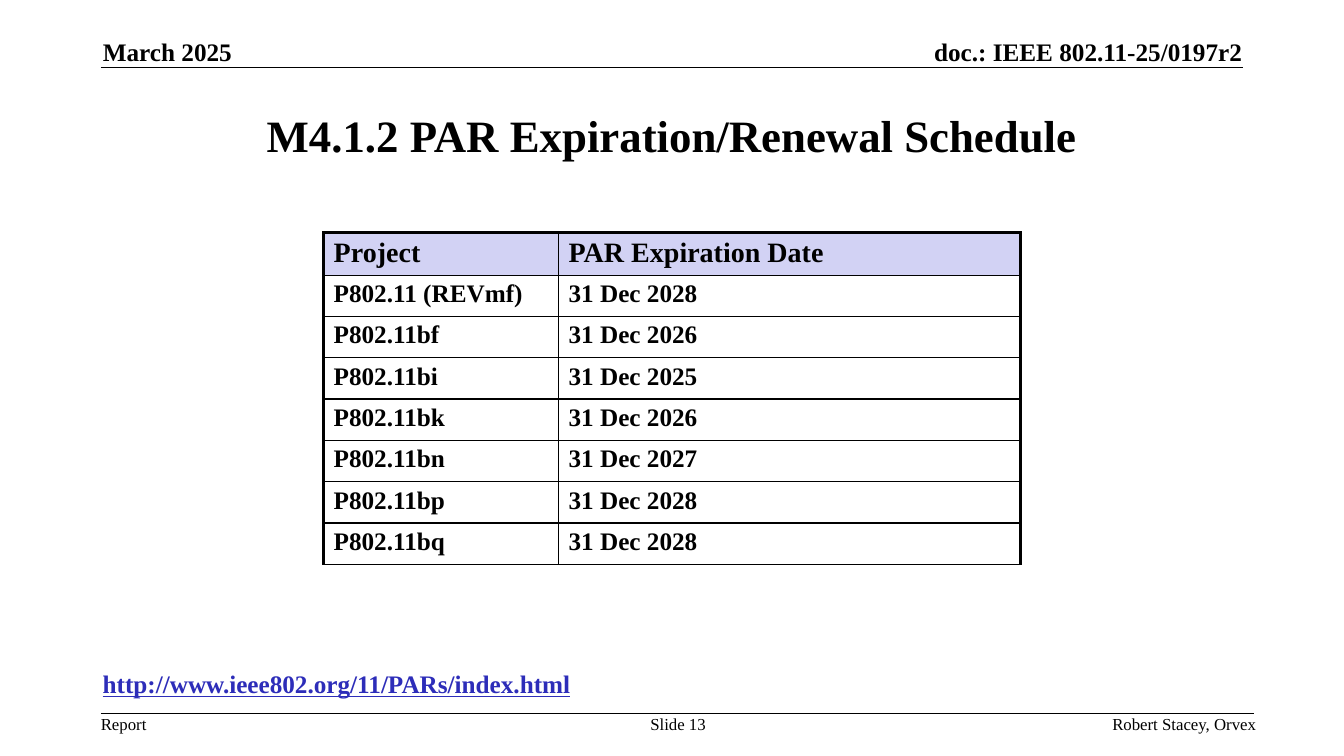
from dataclasses import dataclass

from lxml.etree import SubElement
from pptx import Presentation
from pptx.dml.color import RGBColor
from pptx.enum.shapes import MSO_CONNECTOR as Connector
from pptx.enum.text import MSO_ANCHOR as Anchor, PP_ALIGN as Align
from pptx.oxml import parse_xml
from pptx.oxml.ns import nsdecls, qn
from pptx.slide import Slide
from pptx.table import _Cell as Cell
from pptx.text.text import _Paragraph as Paragraph
from pptx.util import Emu, Pt

EMU_PER_PX = 9144
FONT = "Times New Roman"
BLACK = RGBColor(0x00, 0x00, 0x00)
WHITE = RGBColor(0xFF, 0xFF, 0xFF)
LAVENDER = RGBColor(0xD2, 0xD2, 0xF4)
LINK_BLUE = RGBColor(0x2D, 0x2D, 0xB9)
THIN, THICK = Pt(1), Pt(2.25)


@dataclass(frozen=True)
class Label:
    text: str
    left: int
    top: int
    width: int
    height: int
    size: int
    bold: bool = False
    align: Align = Align.LEFT
    anchor: Anchor = Anchor.TOP
    wrap: bool = False
    inset_x: int = 0
    inset_y: int = 0
    color: RGBColor = BLACK
    underline: bool = False


@dataclass(frozen=True)
class Rule:
    left: int
    right: int
    top: int


LABELS = [
    Label("doc.: IEEE 802.11-25/0197r2", 860, 36, 372, 30, 18, True, Align.RIGHT, Anchor.BOTTOM),
    Label("March 2025", 102, 36, 129, 30, 18, True, anchor=Anchor.BOTTOM),
    Label("M4.1.2 PAR Expiration/Renewal Schedule", 100, 75, 1133, 117, 32, True,
          Align.CENTER, Anchor.MIDDLE, True, 10, 5),
    Label("Report", 100, 708, 46, 20, 12),
    Label("Slide 13", 643, 708, 59, 20, 12, align=Align.CENTER),
    Label("Robert Stacey, Orvex", 1009, 708, 237, 20, 12, align=Align.RIGHT, wrap=True),
    Label("http://www.ieee802.org/11/PARs/index.html", 92, 658, 503, 40, 18, True,
          inset_x=10, inset_y=5, color=LINK_BLUE, underline=True),
]
RULES = [Rule(100, 1233, 67), Rule(100, 1244, 708)]

SCHEDULE = [
    ("Project", "PAR Expiration Date"),
    ("P802.11 (REVmf)", "31 Dec 2028"),
    ("P802.11bf", "31 Dec 2026"),
    ("P802.11bi", "31 Dec 2025"),
    ("P802.11bk", "31 Dec 2026"),
    ("P802.11bn", "31 Dec 2027"),
    ("P802.11bp", "31 Dec 2028"),
    ("P802.11bq", "31 Dec 2028"),
]
COLUMN_WIDTHS = (233, 458)
HEADER_HEIGHT, ROW_HEIGHT = 42, 41


def px(length: int) -> Emu:
    return Emu(length * EMU_PER_PX)


def style_text(para: Paragraph, size: int, bold: bool, color: RGBColor = BLACK) -> None:
    para.font.name = FONT
    para.font.size = Pt(size)
    para.font.bold = bold
    para.font.color.rgb = color


def draw_label(page: Slide, label: Label) -> None:
    box = page.shapes.add_textbox(px(label.left), px(label.top), px(label.width), px(label.height))
    frame = box.text_frame
    frame.word_wrap = label.wrap
    frame.vertical_anchor = label.anchor
    frame.margin_left = frame.margin_right = px(label.inset_x)
    frame.margin_top = frame.margin_bottom = px(label.inset_y)
    para = frame.paragraphs[0]
    para.text = label.text
    para.alignment = label.align
    style_text(para, label.size, label.bold, label.color)
    if label.underline:
        para.font.underline = True


def draw_rule(page: Slide, rule: Rule) -> None:
    line = page.shapes.add_connector(
        Connector.STRAIGHT, px(rule.left), px(rule.top), px(rule.right), px(rule.top))
    line.line.color.rgb = BLACK
    line.line.width = THIN
    SubElement(line._element.spPr, qn("a:effectLst"))


def set_borders(cell: Cell, left: Emu, right: Emu, top: Emu, bottom: Emu) -> None:
    properties = cell._tc.get_or_add_tcPr()
    for position, (side, width) in enumerate(zip("LRTB", (left, right, top, bottom))):
        properties.insert(position, parse_xml(
            f'<a:ln{side} {nsdecls("a")} w="{int(width)}"><a:solidFill>'
            f'<a:srgbClr val="{BLACK}"/></a:solidFill></a:ln{side}>'))


def draw_schedule(page: Slide) -> None:
    height = HEADER_HEIGHT + ROW_HEIGHT * (len(SCHEDULE) - 1)
    table = page.shapes.add_table(
        len(SCHEDULE), len(COLUMN_WIDTHS), px(321), px(231),
        px(sum(COLUMN_WIDTHS)), px(height)).table
    table.first_row = table.horz_banding = False
    for column, width in zip(table.columns, COLUMN_WIDTHS):
        column.width = px(width)
    last_column = len(COLUMN_WIDTHS) - 1
    for row_index, texts in enumerate(SCHEDULE):
        header = row_index == 0
        table.rows[row_index].height = px(HEADER_HEIGHT if header else ROW_HEIGHT)
        for column_index, text in enumerate(texts):
            cell = table.cell(row_index, column_index)
            cell.text = text
            style_text(cell.text_frame.paragraphs[0], 20 if header else 18, True)
            cell.fill.solid()
            cell.fill.fore_color.rgb = LAVENDER if header else WHITE
            set_borders(
                cell,
                left=THICK if column_index == 0 else THIN,
                right=THICK if column_index == last_column else THIN,
                top=THICK if header else THIN,
                bottom=THIN)


def main() -> None:
    deck = Presentation()
    deck.slide_width, deck.slide_height = px(1333), px(750)
    page = deck.slides.add_slide(deck.slide_layouts[6])
    for rule in RULES:
        draw_rule(page, rule)
    draw_schedule(page)
    for label in LABELS:
        draw_label(page, label)
    deck.save("out.pptx")


if __name__ == "__main__":
    main()
